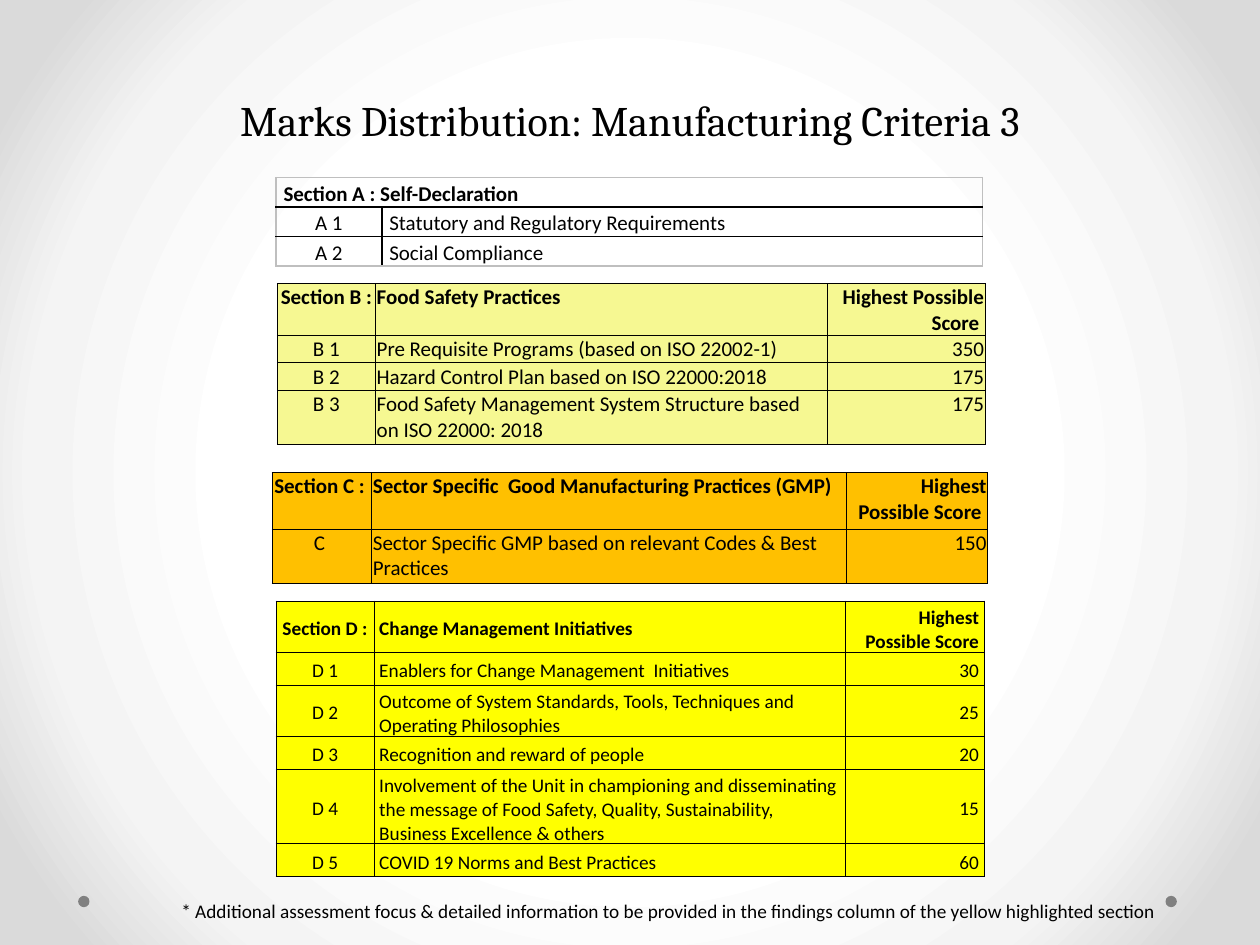
from dataclasses import dataclass

from lxml import etree
from pptx import Presentation
from pptx.dml.color import RGBColor
from pptx.enum.shapes import MSO_SHAPE
from pptx.enum.text import MSO_ANCHOR, MSO_AUTO_SIZE, PP_ALIGN
from pptx.oxml.ns import qn
from pptx.util import Inches, Pt

LEFT, CENTER, RIGHT = PP_ALIGN.LEFT, PP_ALIGN.CENTER, PP_ALIGN.RIGHT
TOP, MIDDLE, BOTTOM = MSO_ANCHOR.TOP, MSO_ANCHOR.MIDDLE, MSO_ANCHOR.BOTTOM
FIXED, GROW = MSO_AUTO_SIZE.NONE, MSO_AUTO_SIZE.SHAPE_TO_FIT_TEXT
OVAL = MSO_SHAPE.OVAL
TITLE_ONLY = 5


@dataclass(frozen=True)
class Theme:
    heading_font: str = "Cambria"
    body_font: str = "Calibri"
    title_size: int = 24
    body_size: int = 12
    small_size: int = 11
    ink: str = "000000"
    outline: str = "BFBFBF"
    dot: str = "808080"
    pale_yellow: str = "F6F892"
    orange: str = "FFC000"
    yellow: str = "FFFF00"
    backdrop: tuple = ((0, "FFFFFF"), (50, "FFFFFF"), (76, "F4F4F4"),
                       (92, "DADADA"), (100, "DADADA"))


THEME = Theme()
SCORE = "Highest Possible Score"

DECLARATION_ROWS = [
    ("Section A : Self-Declaration", ""),
    ("A 1", "Statutory and Regulatory Requirements"),
    ("A 2", "Social Compliance"),
]
SAFETY_ROWS = [
    ("Section B : ", "Food Safety Practices", SCORE + " "),
    ("B 1", "Pre Requisite Programs (based on ISO 22002-1)", "350"),
    ("B 2", "Hazard Control Plan based on ISO 22000:2018", "175"),
    ("B 3", "Food Safety Management System Structure based on ISO 22000: 2018", "175"),
]
SECTOR_ROWS = [
    ("Section C : ", "Sector Specific  Good Manufacturing Practices (GMP)", SCORE + " "),
    ("C ", "Sector Specific GMP based on relevant Codes & Best Practices", "150"),
]
CHANGE_ROWS = [
    ("Section D :", "Change Management Initiatives", SCORE),
    ("D 1", "Enablers for Change Management  Initiatives", "30"),
    ("D 2", "Outcome of System Standards, Tools, Techniques and Operating Philosophies", "25"),
    ("D 3", "Recognition and reward of people", "20"),
    ("D 4", "Involvement of the Unit in championing and disseminating the message of "
            "Food Safety, Quality, Sustainability, Business Excellence & others", "15"),
    ("D 5", "COVID 19 Norms and Best Practices", "60"),
]


def write(frame, text, font=THEME.body_font, size=THEME.body_size, bold=False,
          align=LEFT, line_spacing=None, space_after=None):
    paragraph = frame.paragraphs[0]
    paragraph.alignment = align
    paragraph.line_spacing = line_spacing
    paragraph.space_after = space_after
    run = paragraph.add_run()
    run.text = text
    run.font.name = font
    run.font.size = Pt(size)
    run.font.bold = bold
    run.font.color.rgb = RGBColor.from_string(THEME.ink)


def add_solid(parent, color):
    fill = etree.SubElement(parent, qn("a:solidFill"))
    etree.SubElement(fill, qn("a:srgbClr"), val=color)


def set_borders(cell, width, colors):
    """Draw the edges of a cell; colors runs left, right, top, bottom."""
    properties = cell._tc.get_or_add_tcPr()
    for side, color in zip("LRTB", colors):
        edge = etree.SubElement(properties, qn(f"a:ln{side}"), w=str(Pt(width)))
        add_solid(edge, color)


class MarksSlide:
    def __init__(self, presentation, theme):
        self.theme = theme
        self.slide = presentation.slides.add_slide(presentation.slide_layouts[TITLE_ONLY])

    def backdrop(self):
        """Fill the background with a circular gradient around the centre."""
        self.slide.background.fill.gradient()
        gradient = next(self.slide.element.iter(qn("a:gradFill")))
        for part in list(gradient):
            gradient.remove(part)
        stops = etree.SubElement(gradient, qn("a:gsLst"))
        for percent, color in self.theme.backdrop:
            stop = etree.SubElement(stops, qn("a:gs"), pos=str(percent * 1000))
            etree.SubElement(stop, qn("a:srgbClr"), val=color)
        circle = etree.SubElement(gradient, qn("a:path"), {"path": "circle"})
        etree.SubElement(circle, qn("a:fillToRect"),
                         {side: "50000" for side in "ltrb"})

    def dot(self, left, top, diameter):
        dot = self.slide.shapes.add_shape(
            OVAL, Inches(left), Inches(top), Inches(diameter), Inches(diameter))
        dot.shadow.inherit = False
        dot.fill.solid()
        dot.fill.fore_color.rgb = RGBColor.from_string(self.theme.dot)
        dot.line.fill.background()

    def title(self, text, left, top, width, height):
        title = self.slide.shapes.title
        title.left, title.top = Inches(left), Inches(top)
        title.width, title.height = Inches(width), Inches(height)
        frame = title.text_frame
        frame.auto_size = FIXED
        frame.vertical_anchor = BOTTOM
        write(frame, text, font=self.theme.heading_font, size=self.theme.title_size,
              align=CENTER, line_spacing=Pt(58))

    def footnote(self, text, left, top, width, height):
        note = self.slide.shapes.add_textbox(
            Inches(left), Inches(top), Inches(width), Inches(height))
        note.text_frame.word_wrap = False
        note.text_frame.auto_size = GROW
        write(note.text_frame, text, size=self.theme.small_size)

    def section(self, rows, left, top, widths, heights, fill=None, outline=None,
                border=0.5, margins=(0.01, 0.01), anchor=TOP, **text_format):
        """Add a section table; margins are (sides, top), a blank title cell is merged."""
        table = self.slide.shapes.add_table(
            len(rows), len(widths), Inches(left), Inches(top),
            Inches(sum(widths)), Inches(sum(heights))).table
        table.first_row = table.horz_banding = False
        for column, width in zip(table.columns, widths):
            column.width = Inches(width)
        for row, height in zip(table.rows, heights):
            row.height = Inches(height)
        outline = outline or self.theme.ink
        merged = not rows[0][1]
        if merged:
            table.cell(0, 0).merge(table.cell(0, len(widths) - 1))
        last_row, last_column = len(rows) - 1, len(widths) - 1
        for r, texts in enumerate(rows):
            for c, text in enumerate(texts):
                cell = table.cell(r, c)
                outer = (c == 0, c == last_column or (merged and r == 0),
                         r == 0, r == last_row)
                set_borders(cell, border,
                            [outline if edge else self.theme.ink for edge in outer])
                if fill:
                    cell.fill.solid()
                    cell.fill.fore_color.rgb = RGBColor.from_string(fill)
                else:
                    cell.fill.background()
                cell.margin_left = cell.margin_right = Inches(margins[0])
                cell.margin_top, cell.margin_bottom = Inches(margins[1]), 0
                cell.vertical_anchor = anchor
                if text:
                    align = LEFT if merged and r == 0 else (CENTER, LEFT, RIGHT)[c]
                    write(cell.text_frame, text, bold=r == 0, align=align, **text_format)


def main():
    presentation = Presentation()
    presentation.slide_width, presentation.slide_height = Inches(10), Inches(7.5)
    marks = MarksSlide(presentation, THEME)
    marks.backdrop()
    for dot_left in (9.25, 0.62):
        marks.dot(dot_left, 7.11, 0.09)
    marks.title("Marks Distribution: Manufacturing Criteria 3", 0.5, -0.03, 9, 1.23)
    marks.section(DECLARATION_ROWS, 2.19, 1.41, (0.84, 4.77), [0.22] * 3,
                  outline=THEME.outline, border=1, margins=(0.06, 0),
                  line_spacing=1.15, space_after=Pt(6))
    marks.footnote("* Additional assessment focus & detailed information to be provided in "
                   "the findings column of the yellow highlighted section",
                   1.34, 7.09, 7.98, 0.29)
    marks.section(SAFETY_ROWS, 2.2, 2.25, (0.78, 3.59, 1.25), (0.31, 0.22, 0.22, 0.43),
                  fill=THEME.pale_yellow)
    marks.section(SECTOR_ROWS, 2.16, 3.75, (0.79, 3.77, 1.12), (0.45, 0.43),
                  fill=THEME.orange)
    marks.section(CHANGE_ROWS, 2.19, 4.77, (0.78, 3.74, 1.1), [0.33] + [0.26] * 5,
                  fill=THEME.yellow, margins=(0.04, 0.04), anchor=MIDDLE,
                  size=THEME.small_size)
    presentation.save("out.pptx")


if __name__ == "__main__":
    main()
